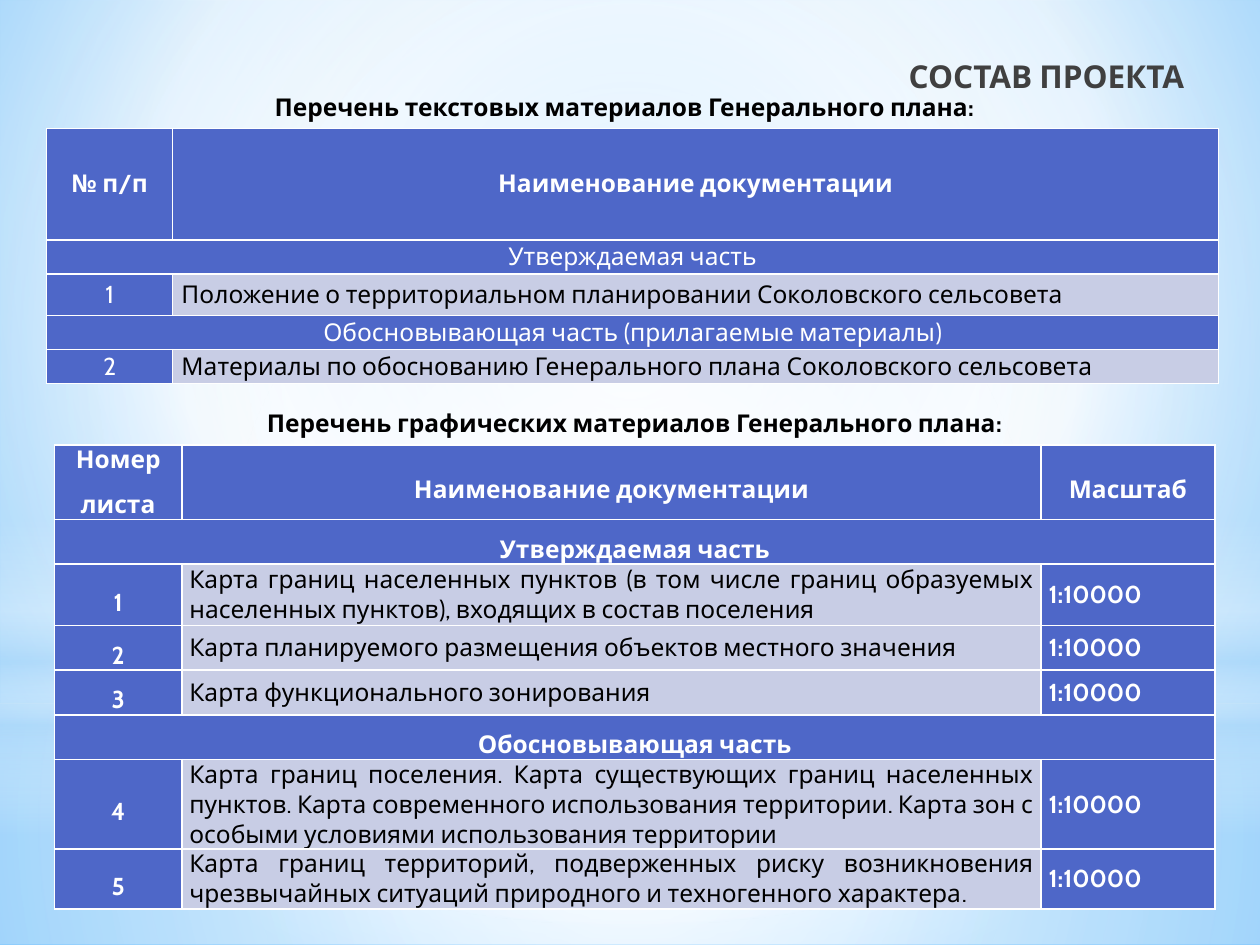
from lxml.etree import SubElement
from pptx import Presentation
from pptx.dml.color import RGBColor
from pptx.enum.shapes import MSO_SHAPE
from pptx.enum.text import MSO_ANCHOR, MSO_AUTO_SIZE, PP_ALIGN
from pptx.oxml import parse_xml
from pptx.oxml.ns import nsdecls, qn
from pptx.util import Pt

FONT = "Cabin"
WHITE = RGBColor(0xFF, 0xFF, 0xFF)
BLACK = RGBColor(0x00, 0x00, 0x00)
TITLE_GREY = RGBColor(0x40, 0x40, 0x40)
HEADER_BLUE = RGBColor(0x4E, 0x67, 0xC8)
ROW_LILAC = RGBColor(0xC8, 0xCD, 0xE5)
SKY = RGBColor(0x9E, 0xD5, 0xFF)
DEEP_SKY = RGBColor(0x5B, 0xB9, 0xFF)
PALE_SKY = RGBColor(0xB4, 0xDC, 0xFA)

CENTERED = (50, 50, 50, 50)
SCALE = "1:10000"
TEXT_ROWS = [
    ("№ п/п", "Наименование документации"),
    ("Утверждаемая часть",),
    ("1", "Положение о территориальном планировании Соколовского сельсовета"),
    ("Обосновывающая часть (прилагаемые материалы)",),
    ("2", "Материалы по обоснованию Генерального плана Соколовского сельсовета"),
]
MAP_ROWS = [
    ("Номер\nлиста", "Наименование документации", "Масштаб"),
    ("Утверждаемая часть",),
    ("1", "Карта границ населенных пунктов (в том числе границ образуемых "
          "населенных пунктов), входящих в состав поселения\u00a0", SCALE),
    ("2", "Карта планируемого размещения объектов местного значения", SCALE),
    ("3", "Карта функционального зонирования", SCALE),
    ("Обосновывающая часть",),
    ("4", "Карта границ поселения. Карта существующих границ населенных пунктов. "
          "Карта современного использования территории. Карта зон с особыми "
          "условиями использования территории", SCALE),
    ("5", "Карта границ территорий, подверженных риску возникновения чрезвычайных "
          "ситуаций природного и техногенного характера.", SCALE),
]


def paint_gradient(fill, properties, stops, focus=None):
    """Fill with (position, colour, opacity) stops, circular around focus or vertical."""
    fill.gradient()
    gradient = parse_xml(f'<a:gradFill {nsdecls("a")} rotWithShape="1"><a:gsLst/></a:gradFill>')
    for position, color, opacity in stops:
        stop = SubElement(gradient[0], qn("a:gs"), pos=str(position * 1000))
        tint = SubElement(stop, qn("a:srgbClr"), val=str(color))
        if opacity < 100:
            SubElement(tint, qn("a:alpha"), val=str(opacity * 1000))
    if focus:
        circle = SubElement(gradient, qn("a:path"), {"path": "circle"})
        edges = {side: str(edge * 1000) for side, edge in zip("ltrb", focus)}
        SubElement(circle, qn("a:fillToRect"), edges)
    else:
        SubElement(gradient, qn("a:lin"), ang="5400000", scaled="0")
    properties.replace(properties.find(qn("a:gradFill")), gradient)


def add_glow(slide, preset, top, height, stops, focus=None):
    """Add a full-width translucent layer of the sky."""
    glow = slide.shapes.add_shape(preset, Pt(0), Pt(top), Pt(720), Pt(height))
    glow.shadow.inherit = False
    glow.line.fill.background()
    paint_gradient(glow.fill, glow.element.spPr, stops, focus)


def add_sky(slide):
    """Paint the background and its layers of light."""
    fill = slide.background.fill
    fill.gradient()
    paint_gradient(fill, slide.element.find(".//" + qn("p:bgPr")),
                   [(0, SKY, 100), (60, WHITE, 100), (100, DEEP_SKY, 100)],
                   (20, 10, 20, 60))
    add_glow(slide, MSO_SHAPE.RECTANGLE, 402, 138,
             [(0, WHITE, 91), (37, WHITE, 76), (100, PALE_SKY, 79)], CENTERED)
    add_glow(slide, MSO_SHAPE.RECTANGLE, 0, 402,
             [(0, WHITE, 89), (48, WHITE, 62), (100, PALE_SKY, 79)], CENTERED)
    add_glow(slide, MSO_SHAPE.RECTANGLE, 297, 180,
             [(0, WHITE, 0), (29, WHITE, 30), (45, PALE_SKY, 40),
              (55, WHITE, 26), (65, PALE_SKY, 60), (100, WHITE, 0)])
    add_glow(slide, MSO_SHAPE.OVAL, 126, 402,
             [(0, WHITE, 100), (56, WHITE, 0)], CENTERED)


def format_paragraph(paragraph, size, color, bold, alignment):
    """Set the font and alignment of a paragraph."""
    paragraph.alignment = alignment
    font = paragraph.font
    font.name, font.size, font.bold = FONT, Pt(size), bold
    font.color.rgb = color


def set_title(slide, text):
    """Place the title at the top right, in front of the sky."""
    title = slide.shapes.title
    slide.shapes.element.append(title.element)
    title.left, title.top, title.width, title.height = Pt(36), Pt(26.6), Pt(648), Pt(34)
    frame = title.text_frame
    frame.text = text
    frame.vertical_anchor = MSO_ANCHOR.MIDDLE
    format_paragraph(frame.paragraphs[0], 18, TITLE_GREY, True, PP_ALIGN.RIGHT)


def add_caption(slide, left, top, text):
    """Add the bold centred heading of a table."""
    caption = slide.shapes.add_textbox(Pt(left), Pt(top), Pt(674.6), Pt(24.2))
    frame = caption.text_frame
    frame.word_wrap = True
    frame.auto_size = MSO_AUTO_SIZE.SHAPE_TO_FIT_TEXT
    frame.vertical_anchor = MSO_ANCHOR.MIDDLE
    frame.text = text
    format_paragraph(frame.paragraphs[0], 14, BLACK, True, PP_ALIGN.CENTER)


def format_cell(cell, inset, border):
    """Give a cell its blue fill, side insets and white borders."""
    cell.vertical_anchor = MSO_ANCHOR.MIDDLE
    cell.margin_left = cell.margin_right = Pt(inset)
    cell.margin_top = cell.margin_bottom = Pt(0)
    properties = cell._tc.get_or_add_tcPr()
    for side in ("a:lnL", "a:lnR", "a:lnT", "a:lnB"):
        line = SubElement(properties, qn(side), w=str(Pt(border)))
        solid = SubElement(line, qn("a:solidFill"))
        SubElement(solid, qn("a:srgbClr"), val=str(WHITE))
    cell.fill.solid()
    cell.fill.fore_color.rgb = HEADER_BLUE


def write_cell(cell, text, bold, alignment, spacing):
    """Write white text with the given line spacing into a cell."""
    cell.text = text
    for paragraph in cell.text_frame.paragraphs:
        format_paragraph(paragraph, 14, WHITE, bold, alignment)
    if spacing:
        paragraph.line_spacing = spacing


def write_description(cell, text):
    """Write a justified black description on lilac."""
    cell.text = text
    cell.fill.fore_color.rgb = ROW_LILAC
    format_paragraph(cell.text_frame.paragraphs[0], 14, BLACK, False, PP_ALIGN.JUSTIFY)


def add_list(slide, left, top, widths, heights, rows, inset, border, bold=False, spacing=None):
    """Add a table of documents whose one-item rows span all columns."""
    table = slide.shapes.add_table(len(rows), len(widths), Pt(left), Pt(top),
                                   Pt(sum(widths)), Pt(sum(heights))).table
    table.horz_banding = False
    for column, width in zip(table.columns, widths):
        column.width = Pt(width)
    for row, height in zip(table.rows, heights):
        row.height = Pt(height)
    for cell in table.iter_cells():
        format_cell(cell, inset, border)
    for r, entries in enumerate(rows):
        if len(entries) == 1:
            table.cell(r, 0).merge(table.cell(r, len(widths) - 1))
        for c, text in enumerate(entries):
            cell = table.cell(r, c)
            if r and c == 1:
                write_description(cell, text)
            elif r and c == 2:
                write_cell(cell, text, bold, PP_ALIGN.LEFT, None)
            else:
                write_cell(cell, text, bold or r == 0, PP_ALIGN.CENTER, spacing)


def main():
    """Build and save the slide."""
    presentation = Presentation()
    presentation.slide_width, presentation.slide_height = Pt(720), Pt(540)
    slide = presentation.slides.add_slide(presentation.slide_layouts[5])
    add_sky(slide)
    set_title(slide, "СОСТАВ ПРОЕКТА")
    add_list(slide, 26.7, 73.2, (72, 597.6), (64, 19.4, 23.8, 19.4, 19.4),
             TEXT_ROWS, inset=5, border=0.75)
    add_list(slide, 31.2, 254.2, (72.7, 491, 99.4), (42, 25, 35, 25, 25, 25, 51, 34),
             MAP_ROWS, inset=4.3, border=1, bold=True, spacing=1.5)
    add_caption(slide, 19.4, 49, "Перечень текстовых материалов Генерального плана:")
    add_caption(slide, 25.2, 229.7, "Перечень графических материалов Генерального плана:")
    presentation.save("out.pptx")


if __name__ == "__main__":
    main()
